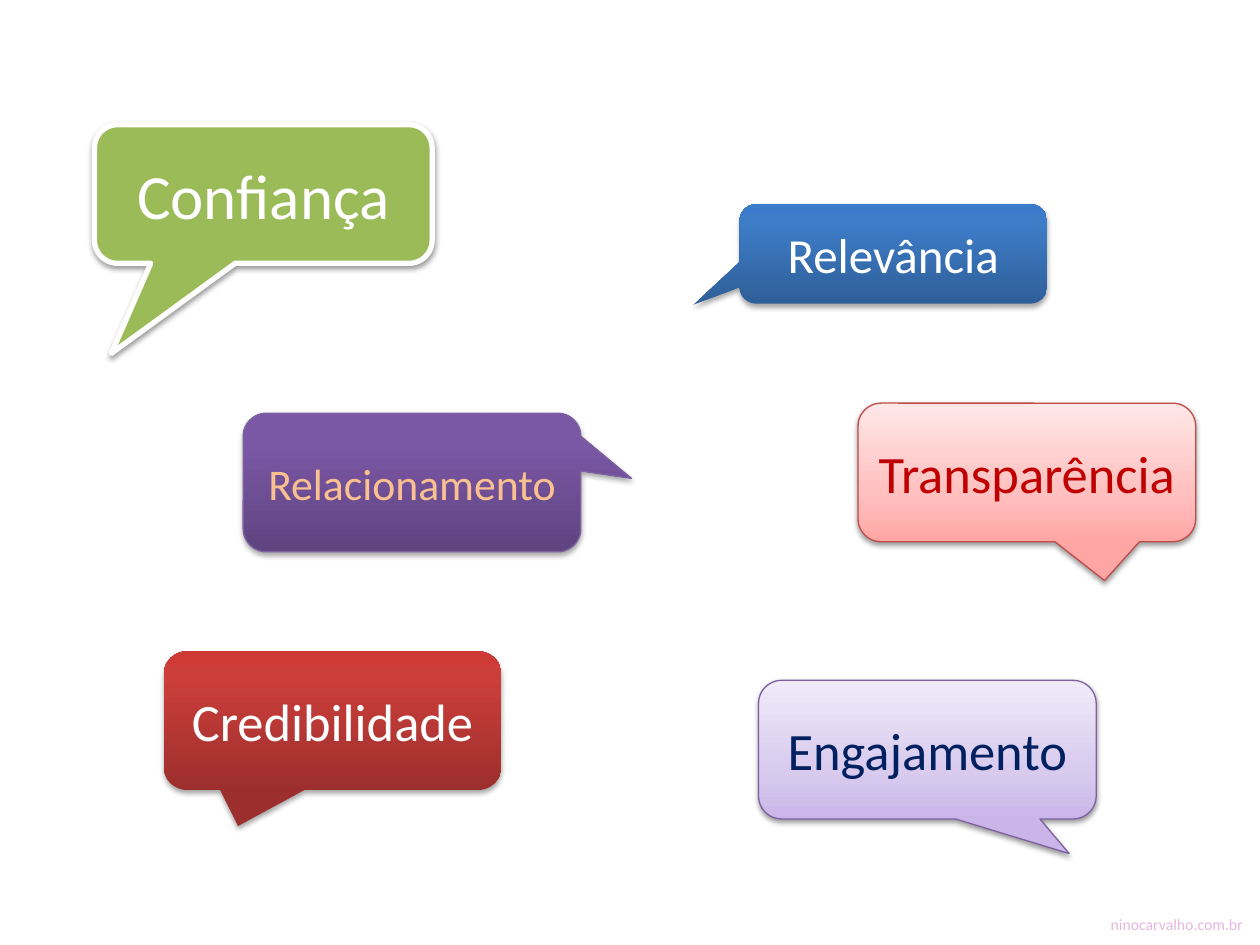
from copy import deepcopy

from lxml import etree
from pptx import Presentation
from pptx.dml.color import RGBColor
from pptx.enum.shapes import MSO_SHAPE
from pptx.enum.text import MSO_ANCHOR, PP_ALIGN
from pptx.oxml.ns import qn
from pptx.util import Inches, Pt

CALLOUT = MSO_SHAPE.ROUNDED_RECTANGULAR_CALLOUT
MIDDLE = MSO_ANCHOR.MIDDLE
CENTER, RIGHT = PP_ALIGN.CENTER, PP_ALIGN.RIGHT
FONT = "Calibri"
SIZE = (2.68, 1.1)
SOFT = {"alpha": 38, "dist": 1.6}
STRONG = {"alpha": 35, "dist": 1.8}

CALLOUTS = [
    {"text": "Relevância", "at": (5.87, 1.62), "size": (2.44, 0.79), "tail": (-0.65, 0.51),
     "fill": [(0, "2F5F99"), (0.8, "3D7CC7"), (1, "3A7CCB")],
     "shadow": STRONG, "pt": 28, "color": "FFFFFF"},
    {"text": "Confiança", "at": (0.75, 0.99), "tail": (-0.45, 1.15),
     "fill": "9BBB59", "line": ("FFFFFF", 3),
     "shadow": SOFT, "pt": 36, "color": "FFFFFF"},
    {"text": "Credibilidade", "at": (1.3, 5.17), "tail": (-0.28, 0.76),
     "fill": [(0, "9C2F2D"), (0.8, "CB3E3A"), (1, "CE3B37")],
     "shadow": STRONG, "pt": 30, "color": "FFFFFF"},
    {"text": "Engajamento", "at": (6.02, 5.4), "tail": (0.42, 0.75),
     "fill": [(0, "C9B5E8"), (0.35, "D8CBEE"), (1, "F0EAF9")], "line": ("7D60A0", 0.75),
     "shadow": SOFT, "pt": 30, "color": "002060"},
    {"text": "Transparência", "at": (6.81, 3.2), "tail": (0.23, 0.78),
     "fill": [(0, "FFA6A5"), (0.35, "FFC0BF"), (1, "FFE7E7")], "line": ("BF4C48", 0.75),
     "shadow": SOFT, "pt": 30, "color": "C00000"},
    {"text": "Relacionamento", "at": (1.93, 3.28), "tail": (0.65, -0.03),
     "fill": [(0, "5F4480"), (0.8, "7B58A6"), (1, "7C57A8")], "line": ("7D60A0", 0.75),
     "shadow": STRONG, "pt": 25, "color": "FAC090"},
]


def rgb(value):
    return RGBColor.from_string(value)


def set_text(shape, text, pt, color, align):
    tf = shape.text_frame
    tf.word_wrap = True
    p = tf.paragraphs[0]
    p.alignment = align
    r = p.add_run()
    r.text = text
    for name, value in {"name": FONT, "size": Pt(pt)}.items():
        setattr(r.font, name, value)
    r.font.color.rgb = rgb(color)
    return tf


def set_fill(sp, fill):
    if isinstance(fill, str):
        sp.fill.solid()
        sp.fill.fore_color.rgb = rgb(fill)
        return
    sp.fill.gradient()
    sp.fill.gradient_angle = 90
    stops = next(sp._element.spPr.iter(qn("a:gsLst")))
    stops.append(deepcopy(stops[-1]))
    for stop, (position, color) in zip(sp.fill.gradient_stops, fill):
        stop.position = position
        stop.color.rgb = rgb(color)


def set_line(sp, line):
    if line is None:
        sp.line.fill.background()
        return
    color, width = line
    sp.line.color.rgb = rgb(color)
    sp.line.width = Pt(width)


def set_shadow(sp, alpha, dist):
    sp.shadow.inherit = False
    effects = sp._element.spPr.find(qn("a:effectLst"))
    shadow = etree.SubElement(effects, qn("a:outerShdw"), blurRad=str(Pt(3.1)),
                              dist=str(Pt(dist)), dir="5400000", rotWithShape="0")
    color = etree.SubElement(shadow, qn("a:srgbClr"), val="000000")
    etree.SubElement(color, qn("a:alpha"), val=str(alpha * 1000))


def add_callout(s, item):
    box = [Inches(v) for v in item["at"] + item.get("size", SIZE)]
    sp = s.shapes.add_shape(CALLOUT, *box)
    for i, value in enumerate(item["tail"]):
        sp.adjustments[i] = value
    set_fill(sp, item["fill"])
    set_line(sp, item.get("line"))
    set_shadow(sp, **item["shadow"])
    tf = set_text(sp, item["text"], item["pt"], item["color"], CENTER)
    tf.vertical_anchor = MIDDLE


def add_footer(s, text):
    box = [Inches(v) for v in (0.24, 7.21, 9.72, 0.17)]
    set_text(s.shapes.add_textbox(*box), text, 9, "E6B8DC", RIGHT)


def main():
    prs = Presentation()
    prs.slide_width, prs.slide_height = Inches(10), Inches(7.5)
    s = prs.slides.add_slide(prs.slide_layouts[6])
    add_footer(s, "ninocarvalho.com.br")
    for item in CALLOUTS:
        add_callout(s, item)
    prs.save("out.pptx")


if __name__ == "__main__":
    main()
